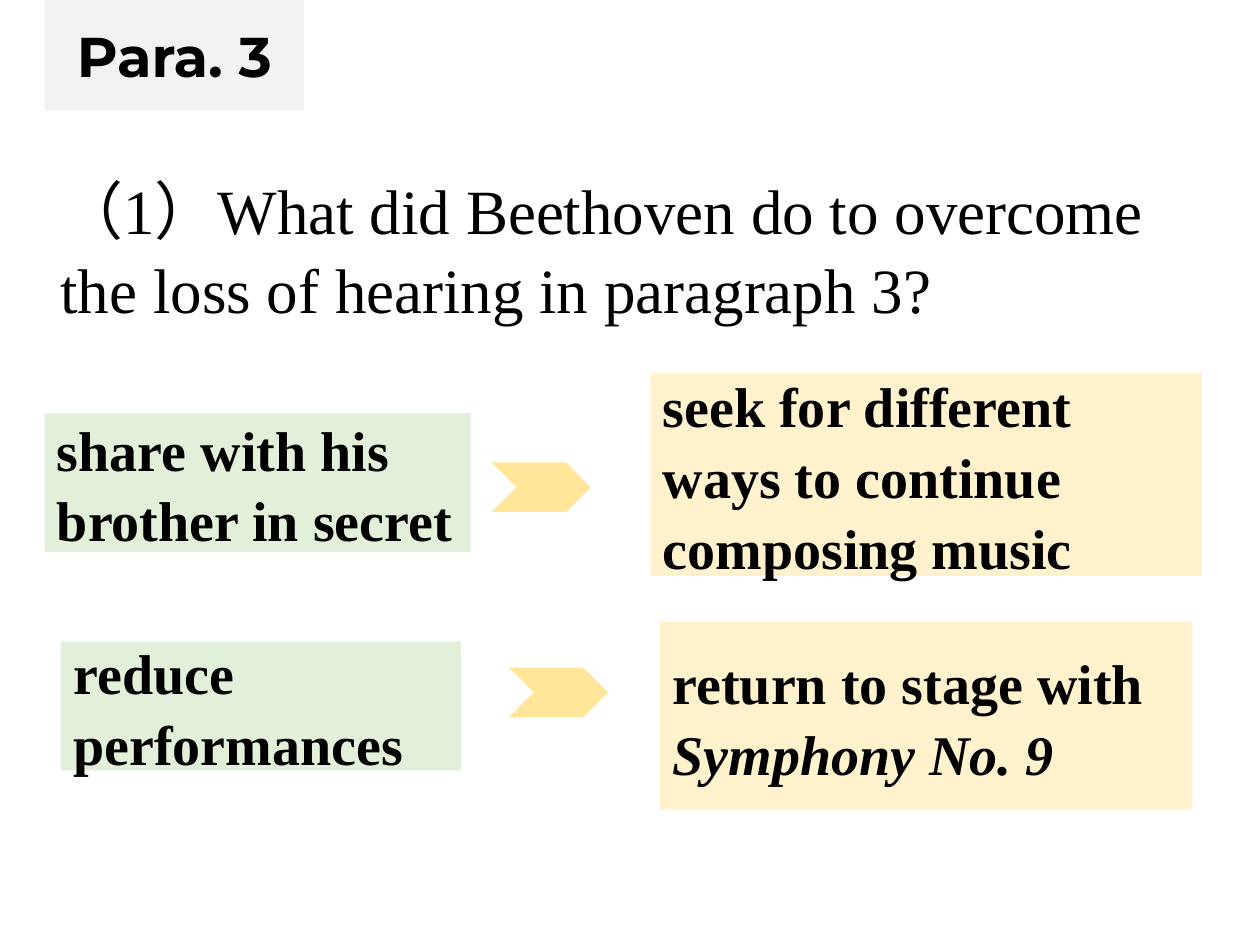
from pptx import Presentation
from pptx import util as u
from pptx.dml.color import RGBColor
from pptx.enum import shapes, text

COLORS = {"ink": "000000", "grey": "F2F2F2", "green": "E2F0D9",
          "cream": "FFF2CC", "yellow": "FFE699"}
SERIF = "Times New Roman"


def fill_shape(shape, color):
    shape.fill.solid()
    shape.fill.fore_color.rgb = RGBColor.from_string(COLORS[color])
    shape.line.fill.background()


def write_text(shape, parts, alignment, line_spacing, **font_format):
    paragraph = shape.text_frame.paragraphs[0]
    paragraph.alignment = alignment
    paragraph.line_spacing = line_spacing
    for wording, italic in parts:
        run = paragraph.add_run()
        run.text = wording
        run.font.color.rgb = RGBColor.from_string(COLORS["ink"])
        for name, value in {**font_format, "italic": italic}.items():
            setattr(run.font, name, value)


presentation = Presentation()
presentation.slide_width = u.Cm(25.4)
presentation.slide_height = u.Cm(19.05)
slide = presentation.slides.add_slide(presentation.slide_layouts[5])

question = slide.shapes.add_textbox(u.Cm(0.97), u.Cm(3.25), u.Cm(22.58), u.Cm(3.33))
question.text_frame.word_wrap = True
write_text(question,
           [("（1）What did Beethoven do to overcome the loss of hearing in paragraph 3?", False)],
           text.PP_ALIGN.LEFT, 1.05, name=SERIF, size=u.Pt(36), bold=False)

title = slide.shapes.title
title_format = {"left": u.Cm(0.9), "top": u.Cm(0), "width": u.Cm(5.23), "height": u.Cm(2.22)}
for name, value in title_format.items():
    setattr(title, name, value)
title.text_frame.auto_size = text.MSO_AUTO_SIZE.NONE
title.text_frame.vertical_anchor = text.MSO_ANCHOR.MIDDLE
fill_shape(title, "grey")
write_text(title, [("Para. 3", False)], text.PP_ALIGN.CENTER, 1.0,
           name="Montserrat", size=u.Pt(32), bold=True)

answers = [
    ("green", (0.9, 8.33, 8.59, 2.8), [("share with his brother in secret", False)]),
    ("green", (1.23, 12.93, 8.07, 2.6), [("reduce performances", False)]),
    ("cream", (13.11, 7.52, 11.12, 4.09),
     [("seek for different ways to continue composing music", False)]),
    ("cream", (13.31, 12.53, 10.73, 3.8),
     [("return to stage with ", False), ("Symphony No. 9", True)]),
]
for color, place, parts in answers:
    answer = slide.shapes.add_shape(shapes.MSO_SHAPE.RECTANGLE, *map(u.Cm, place))
    answer.shadow.inherit = False
    fill_shape(answer, color)
    answer.text_frame.word_wrap = True
    answer.text_frame.vertical_anchor = text.MSO_ANCHOR.MIDDLE
    write_text(answer, parts, text.PP_ALIGN.LEFT, 1.05,
               name=SERIF, size=u.Pt(32), bold=True)

for left, top in [(9.91, 9.32), (10.26, 13.46)]:
    chevron = slide.shapes.add_shape(shapes.MSO_SHAPE.CHEVRON,
                                     u.Cm(left), u.Cm(top), u.Cm(2), u.Cm(1))
    chevron.shadow.inherit = False
    fill_shape(chevron, "yellow")

presentation.save("out.pptx")
